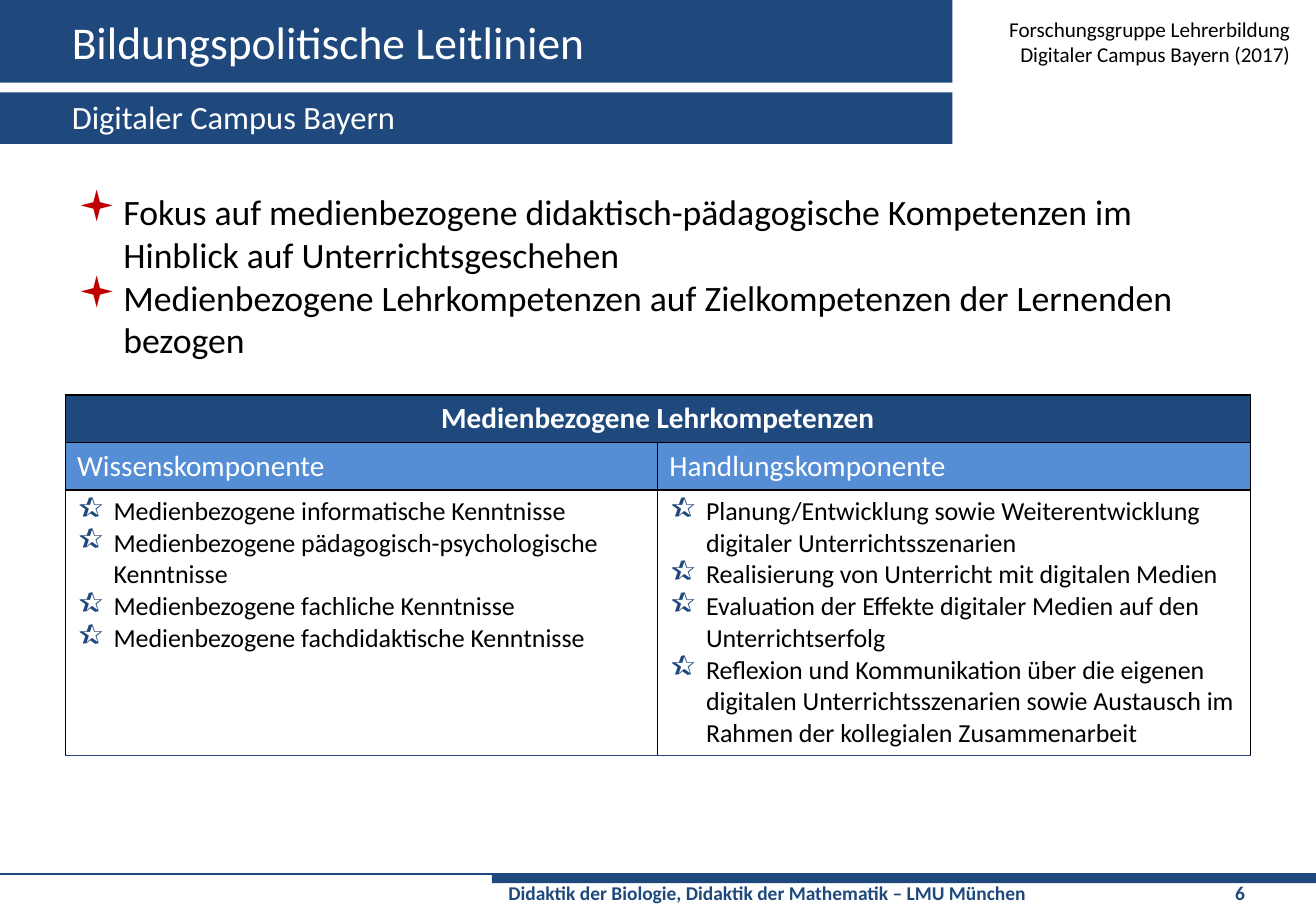
from lxml import etree
from pptx import Presentation
from pptx.dml.color import RGBColor
from pptx.enum.shapes import MSO_CONNECTOR, MSO_SHAPE
from pptx.enum.text import MSO_ANCHOR, PP_ALIGN
from pptx.oxml.ns import qn
from pptx.util import Pt

RECT, STRAIGHT = MSO_SHAPE.RECTANGLE, MSO_CONNECTOR.STRAIGHT
TOP, MIDDLE = MSO_ANCHOR.TOP, MSO_ANCHOR.MIDDLE
LEFT, CENTER, RIGHT = PP_ALIGN.LEFT, PP_ALIGN.CENTER, PP_ALIGN.RIGHT
PX = 3175
W, H = 3243, 2268
BAR_W, FOOT_X, FOOT_Y = 2347, 1212, 2154
COLORS = {"navy": "1F497D", "blue": "558ED5", "red": "C00000",
          "black": "000000", "white": "FFFFFF"}

FOCUS = [
    "Fokus auf medienbezogene didaktisch-pädagogische Kompetenzen im Hinblick auf Unterrichtsgeschehen",
    "Medienbezogene Lehrkompetenzen auf Zielkompetenzen der Lernenden bezogen",
]
TABLE_TITLE = "Medienbezogene Lehrkompetenzen"
COMPONENTS = {
    "Wissenskomponente": [
        "Medienbezogene informatische Kenntnisse",
        "Medienbezogene pädagogisch-psychologische Kenntnisse",
        "Medienbezogene fachliche Kenntnisse",
        "Medienbezogene fachdidaktische Kenntnisse",
    ],
    "Handlungskomponente": [
        "Planung/Entwicklung sowie Weiterentwicklung digitaler Unterrichtsszenarien",
        "Realisierung von Unterricht mit digitalen Medien",
        "Evaluation der Effekte digitaler Medien auf den Unterrichtserfolg",
        "Reflexion und Kommunikation über die eigenen digitalen Unterrichtsszenarien "
        "sowie Austausch im Rahmen der kollegialen Zusammenarbeit",
    ],
}


def px(n):
    """Turn px into EMU."""
    return n * PX


def rgb(name):
    """Look up a named colour."""
    return RGBColor.from_string(COLORS[name])


def sub(parent, tag, **attrs):
    """Append a DrawingML child element."""
    return etree.SubElement(parent, qn(tag), {k: str(v) for k, v in attrs.items()})


def add_bullet(p, char, color, indent):
    """Give a paragraph a coloured hanging bullet."""
    pPr = p._p.get_or_add_pPr()
    pPr.set("marL", str(px(indent)))
    pPr.set("indent", str(-px(indent)))
    sub(sub(pPr, "a:buClr"), "a:srgbClr", val=COLORS[color])
    sub(pPr, "a:buSzPct", val=120000)
    sub(pPr, "a:buFont", typeface="Wingdings")
    sub(pPr, "a:buChar", char=char)


def write(tf, lines, size, color, bold=False, align=LEFT, bullet=None):
    """Fill a text frame with one paragraph per line."""
    font = {"name": "Calibri", "size": Pt(size), "bold": bold}
    for i, line in enumerate(lines):
        p = tf.add_paragraph() if i else tf.paragraphs[0]
        p.alignment = align
        if bullet:
            add_bullet(p, *bullet)
        r = p.add_run()
        r.text = line
        for key, value in font.items():
            setattr(r.font, key, value)
        r.font.color.rgb = rgb(color)


def add_bar(s, x, y, w, h):
    """Draw a plain navy bar."""
    sp = s.shapes.add_shape(RECT, px(x), px(y), px(w), px(h))
    sp.shadow.inherit = False
    sp.fill.solid()
    sp.fill.fore_color.rgb = rgb("navy")
    sp.line.fill.background()


def add_rule(s, x1, y1, x2, y2):
    """Draw a thin navy line."""
    cn = s.shapes.add_connector(STRAIGHT, px(x1), px(y1), px(x2), px(y2))
    cn.line.color.rgb = rgb("navy")
    cn.line.width = Pt(1)
    sub(cn._element.spPr, "a:effectLst")


def add_text(s, box, lines, size, color, anchor=TOP, inset=29, **style):
    """Add a wrapping text box and return its frame."""
    tf = s.shapes.add_textbox(*map(px, box)).text_frame
    frame = {"word_wrap": True, "vertical_anchor": anchor,
             "margin_left": px(inset), "margin_right": px(29),
             "margin_top": px(14), "margin_bottom": px(14)}
    for key, value in frame.items():
        setattr(tf, key, value)
    write(tf, lines, size, color, **style)
    return tf


def add_footer(s, text, number):
    """Add the footer line with the page number at a tab stop."""
    tf = add_text(s, (FOOT_X, 2157, W - FOOT_X, 89), [f"{text}\t{number}"],
                  12, "navy", inset=41, bold=True)
    tabs = sub(tf.paragraphs[0]._p.get_or_add_pPr(), "a:tabLst")
    sub(tabs, "a:tab", pos=px(1791), algn="l")


def style_cell(cell, fill, bottom="black"):
    """Set the borders and fill of a cell."""
    tcPr = cell._tc.get_or_add_tcPr()
    sides = {"L": "black", "R": "black", "T": "black", "B": bottom}
    for side, color in sides.items():
        ln = sub(tcPr, f"a:ln{side}", w=Pt(1))
        sub(sub(ln, "a:solidFill"), "a:srgbClr", val=COLORS[color])
    cell.fill.solid()
    cell.fill.fore_color.rgb = rgb(fill)


def add_competence_table(s, x, y, col_w, row_heights):
    """Add the table with a title row and one column per component."""
    n = len(COMPONENTS)
    t = s.shapes.add_table(len(row_heights), n, px(x), px(y),
                           px(col_w * n), px(sum(row_heights))).table
    t.first_row = t.horz_banding = False
    for row, h in zip(t.rows, row_heights):
        row.height = px(h)
    t.cell(0, 0).merge(t.cell(0, n - 1))
    write(t.cell(0, 0).text_frame, [TABLE_TITLE], 18, "white", bold=True, align=CENTER)
    for c, (heading, items) in enumerate(COMPONENTS.items()):
        t.columns[c].width = px(col_w)
        style_cell(t.cell(0, c), "navy")
        style_cell(t.cell(1, c), "blue")
        style_cell(t.cell(2, c), "white", bottom="navy")
        write(t.cell(1, c).text_frame, [heading], 18, "white")
        write(t.cell(2, c).text_frame, items, 16, "black", bullet=("▶", "navy", 90))


def main():
    """Build the slide and save it."""
    prs = Presentation()
    prs.slide_width = px(W)
    prs.slide_height = px(H)
    prs.element.sldSz.attrib.pop("type", None)
    s = prs.slides.add_slide(prs.slide_layouts[6])
    add_bar(s, 0, 0, BAR_W, 204)
    add_rule(s, 0, FOOT_Y, W, FOOT_Y)
    add_bar(s, FOOT_X, FOOT_Y, W - FOOT_X, 23)
    add_footer(s, "Didaktik der Biologie, Didaktik der Mathematik – LMU München", 6)
    add_bar(s, 0, 228, BAR_W, 127)
    add_text(s, (162, 454, 2920, 1572), FOCUS, 22, "black", bullet=("▪", "red", 113))
    add_competence_table(s, 161, 974, 1460, (117, 117, 655))
    add_text(s, (148, 0, 2177, 204), ["Bildungspolitische Leitlinien"], 28, "white", MIDDLE)
    add_text(s, (2323, 0, 884, 204),
             ["Forschungsgruppe Lehrerbildung Digitaler Campus Bayern (2017)"],
             13, "black", MIDDLE, align=RIGHT)
    add_text(s, (148, 226, 2177, 127), ["Digitaler Campus Bayern"], 20, "white")
    prs.save("out.pptx")


if __name__ == "__main__":
    main()
